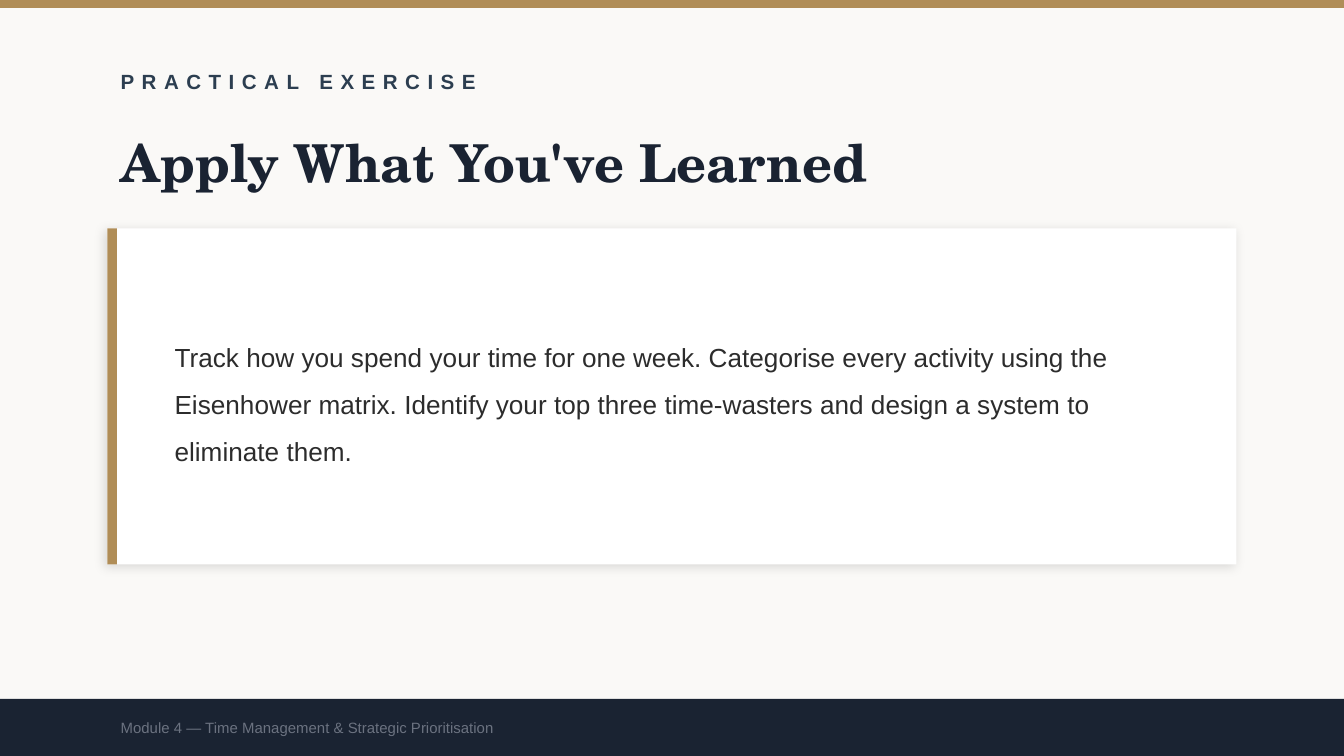
from lxml import etree
from pptx import Presentation
from pptx.dml.color import RGBColor
from pptx.enum.shapes import MSO_SHAPE as Shape
from pptx.enum.text import MSO_ANCHOR as Anchor, MSO_AUTO_SIZE as AutoSize, PP_ALIGN as Align
from pptx.oxml import parse_xml
from pptx.oxml.ns import nsdecls
from pptx.util import Cm, Pt

# Content
LABEL = "PRACTICAL EXERCISE"
TITLE = "Apply What You've Learned"
TASK = (
    "Track how you spend your time for one week. Categorise every activity "
    "using the Eisenhower matrix. Identify your top three time-wasters and "
    "design a system to eliminate them."
)
FOOTER = "Module 4 — Time Management & Strategic Prioritisation"

COLORS = {
    "paper": "FAF9F7", "gold": "B08D57", "slate": "2C3E50", "navy": "1A2332",
    "white": "FFFFFF", "ink": "2C2C2C", "grey": "6B7280",
}
SANS, SERIF = "Arial", "TeX Gyre Schola"

# Layout in centimetres
WIDTH, HEIGHT = 25.4, 14.29
MARGIN, TEXT_WIDTH = 2.03, 20.32
CARD_TOP, CARD_HEIGHT, CARD_PAD = 4.32, 6.35, 0.51
CARD_WIDTH = WIDTH - 2 * MARGIN
TASK_LEFT, TASK_WIDTH = 3.05, 19.56
FOOTER_TOP = 13.21
FOOTER_HEIGHT = HEIGHT - FOOTER_TOP


def color(name):
    return RGBColor.from_string(COLORS[name])


def add_bar(left, top, width, height, fill):
    bar = slide.shapes.add_shape(Shape.RECTANGLE, Cm(left), Cm(top), Cm(width), Cm(height))
    bar.shadow.inherit = False
    bar.fill.solid()
    bar.fill.fore_color.rgb = color(fill)
    bar.line.fill.background()
    return bar


def add_soft_shadow(shape):
    effects = shape._element.spPr.find("{*}effectLst")
    effects.append(parse_xml(
        f'<a:outerShdw {nsdecls("a")} blurRad="{Pt(6)}" dist="{Pt(2)}" dir="{135 * 60000}" '
        'algn="bl" rotWithShape="0"><a:srgbClr val="000000">'
        '<a:alpha val="12000"/></a:srgbClr></a:outerShdw>'))


def write(box, place, text, size, ink, font=SANS, bold=False, tracking=0, spacing=None):
    box.left, box.top, box.width, box.height = (Cm(value) for value in place)
    frame = box.text_frame
    frame.word_wrap = True
    frame.auto_size = AutoSize.NONE
    frame.vertical_anchor = Anchor.MIDDLE
    para = frame.paragraphs[0]
    para.alignment = Align.LEFT
    if spacing:
        para.line_spacing = spacing
    span = para.add_run()
    span.text = text
    span.font.name, span.font.size, span.font.bold = font, Pt(size), bold
    span.font.color.rgb = color(ink)
    if tracking:
        span.font._element.set("spc", str(tracking * 100))


def add_text(place, *args, **style):
    write(slide.shapes.add_textbox(0, 0, 0, 0), place, *args, **style)


deck = Presentation()
deck.slide_width, deck.slide_height = Cm(WIDTH), Cm(HEIGHT)
slide = deck.slides.add_slide(deck.slide_layouts[5])
slide.background.fill.solid()
slide.background.fill.fore_color.rgb = color("paper")

# Heading
add_bar(0, 0, WIDTH, 0.15, "gold")
add_text((MARGIN, 1.02, TEXT_WIDTH, 1.02), LABEL, 11, "slate", bold=True, tracking=4)
write(slide.shapes.title, (MARGIN, 2.29, TEXT_WIDTH, 1.52), TITLE, 28, "navy",
      font=SERIF, bold=True)

# Exercise card
card = add_bar(MARGIN, CARD_TOP, CARD_WIDTH, CARD_HEIGHT, "white")
add_soft_shadow(card)
add_bar(MARGIN, CARD_TOP, 0.18, CARD_HEIGHT, "gold")
add_text((TASK_LEFT, CARD_TOP + CARD_PAD, TASK_WIDTH, CARD_HEIGHT - 2 * CARD_PAD),
         TASK, 14, "ink", spacing=1.5)

# Footer
add_bar(0, FOOTER_TOP, WIDTH, FOOTER_HEIGHT, "navy")
add_text((MARGIN, FOOTER_TOP, TEXT_WIDTH, FOOTER_HEIGHT), FOOTER, 8, "grey")

deck.save("out.pptx")
